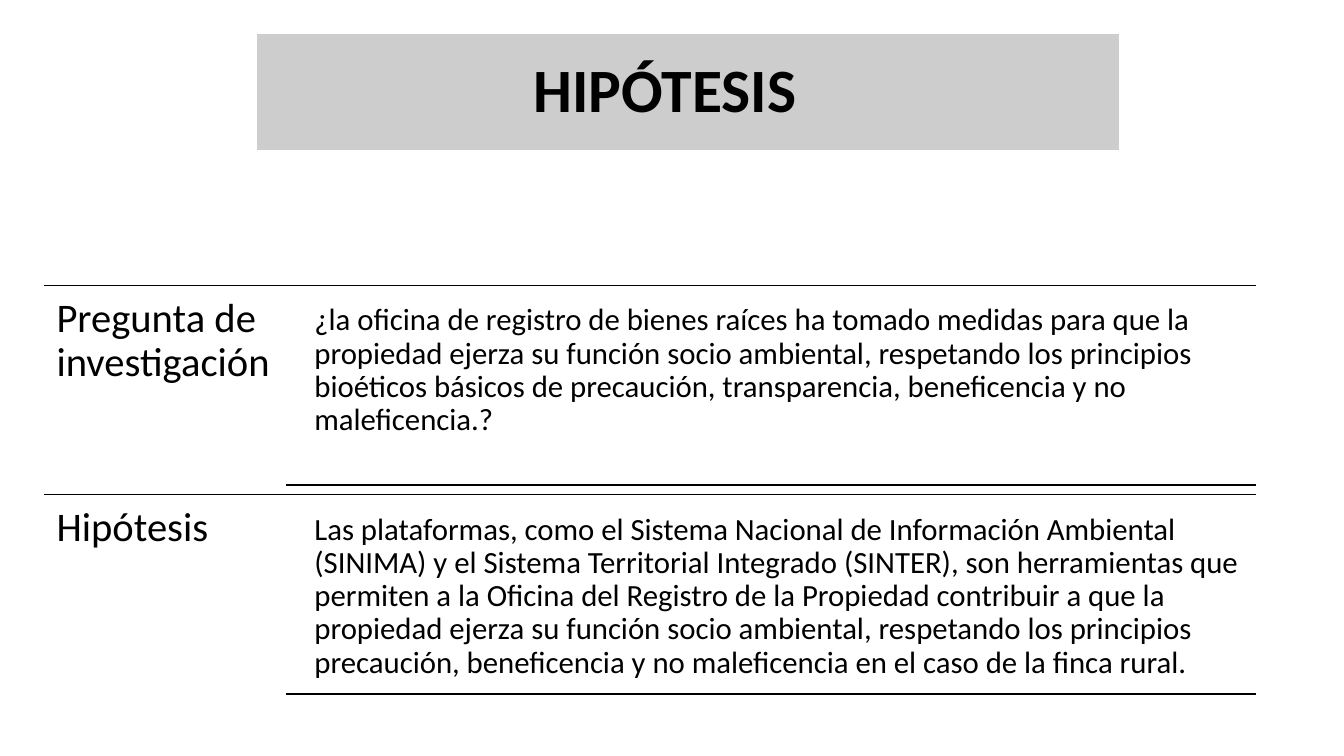
from lxml import etree
from pptx import Presentation
from pptx.dml.color import RGBColor
from pptx.enum import shapes, text
from pptx.oxml import ns
from pptx.util import Pt

BLACK = RGBColor(0, 0, 0)
WHITE = RGBColor(255, 255, 255)
GREY = RGBColor(0xBF, 0xBF, 0xBF)

LEFT, RIGHT = 31.7, 897.1
LABEL_WIDTH = 172.8
RULE_LEFT = LEFT + LABEL_WIDTH
BODY_LEFT, BODY_WIDTH = 218, 679.7
TABLE_TOP, ROW_HEIGHT = 203.8, 149.4
BODY_GAP, BODY_HEIGHT = 7, 135.6

ROWS = [
    ("Pregunta de investigación",
     "¿la oficina de registro de bienes raíces ha tomado medidas para que la "
     "propiedad ejerza su función socio ambiental, respetando los principios "
     "bioéticos básicos de precaución, transparencia, beneficencia y no "
     "maleficencia.?"),
    ("Hipótesis",
     "Las plataformas, como el Sistema Nacional de Información Ambiental "
     "(SINIMA) y el Sistema Territorial Integrado (SINTER), son herramientas "
     "que permiten a la Oficina del Registro de la Propiedad contribuir a que "
     "la propiedad ejerza su función socio ambiental, respetando los "
     "principios precaución, beneficencia y no maleficencia en el caso de la "
     "finca rural."),
]

deck = Presentation()
deck.slide_width, deck.slide_height = Pt(960), Pt(540)
page = deck.slides.add_slide(deck.slide_layouts[5])


def add_rule(left, top):
    rule = page.shapes.add_connector(
        shapes.MSO_CONNECTOR.STRAIGHT, Pt(left), Pt(top), Pt(RIGHT), Pt(top))
    rule.line.color.rgb = BLACK
    rule.line.width = Pt(1)
    etree.SubElement(rule._element.spPr, ns.qn("a:effectLst"))


def add_text(words, left, top, width, height, inset, size):
    box = page.shapes.add_textbox(Pt(left), Pt(top), Pt(width), Pt(height))
    frame = box.text_frame
    frame.word_wrap = True
    frame.margin_left = frame.margin_right = Pt(inset)
    frame.margin_top = frame.margin_bottom = Pt(inset)
    para = frame.paragraphs[0]
    para.text = words
    para.line_spacing = 0.9
    para.font.name = "Calibri"
    para.font.size = Pt(size)
    para.font.color.rgb = BLACK


# Title band, placed behind the title
band = page.shapes.add_shape(
    shapes.MSO_SHAPE.RECTANGLE, Pt(183), Pt(23.5), Pt(616.5), Pt(84.5))
band.shadow.inherit = False
band.fill.solid()
band.fill.fore_color.rgb = GREY
band_color = band._element.spPr.find(ns.qn("a:solidFill"))[0]
etree.SubElement(band_color, ns.qn("a:alpha"), val="78000")
band.line.color.rgb = WHITE
band.line.width = Pt(1)

title = page.shapes.title
title._element.addprevious(band._element)
title.left, title.top, title.width, title.height = Pt(56), Pt(14), Pt(828), Pt(104)
title.text_frame.auto_size = text.MSO_AUTO_SIZE.NONE
title.text_frame.vertical_anchor = text.MSO_ANCHOR.MIDDLE
heading = title.text_frame.paragraphs[0]
heading.text = " HIPÓTESIS"
heading.alignment = text.PP_ALIGN.CENTER
heading.line_spacing = 0.9
heading.font.name = "Calibri"
heading.font.size = Pt(44)
heading.font.bold = True
heading.font.color.rgb = BLACK

# Each row: full rule, label, statement, shorter closing rule
for index, (label, statement) in enumerate(ROWS):
    top = TABLE_TOP + index * ROW_HEIGHT
    body_top = top + BODY_GAP
    add_rule(LEFT, top)
    add_text(label, LEFT, top, LABEL_WIDTH, ROW_HEIGHT, 8.7, 29)
    add_text(statement, BODY_LEFT, body_top, BODY_WIDTH, BODY_HEIGHT, 6.6, 22)
    add_rule(RULE_LEFT, body_top + BODY_HEIGHT)

deck.save("out.pptx")
